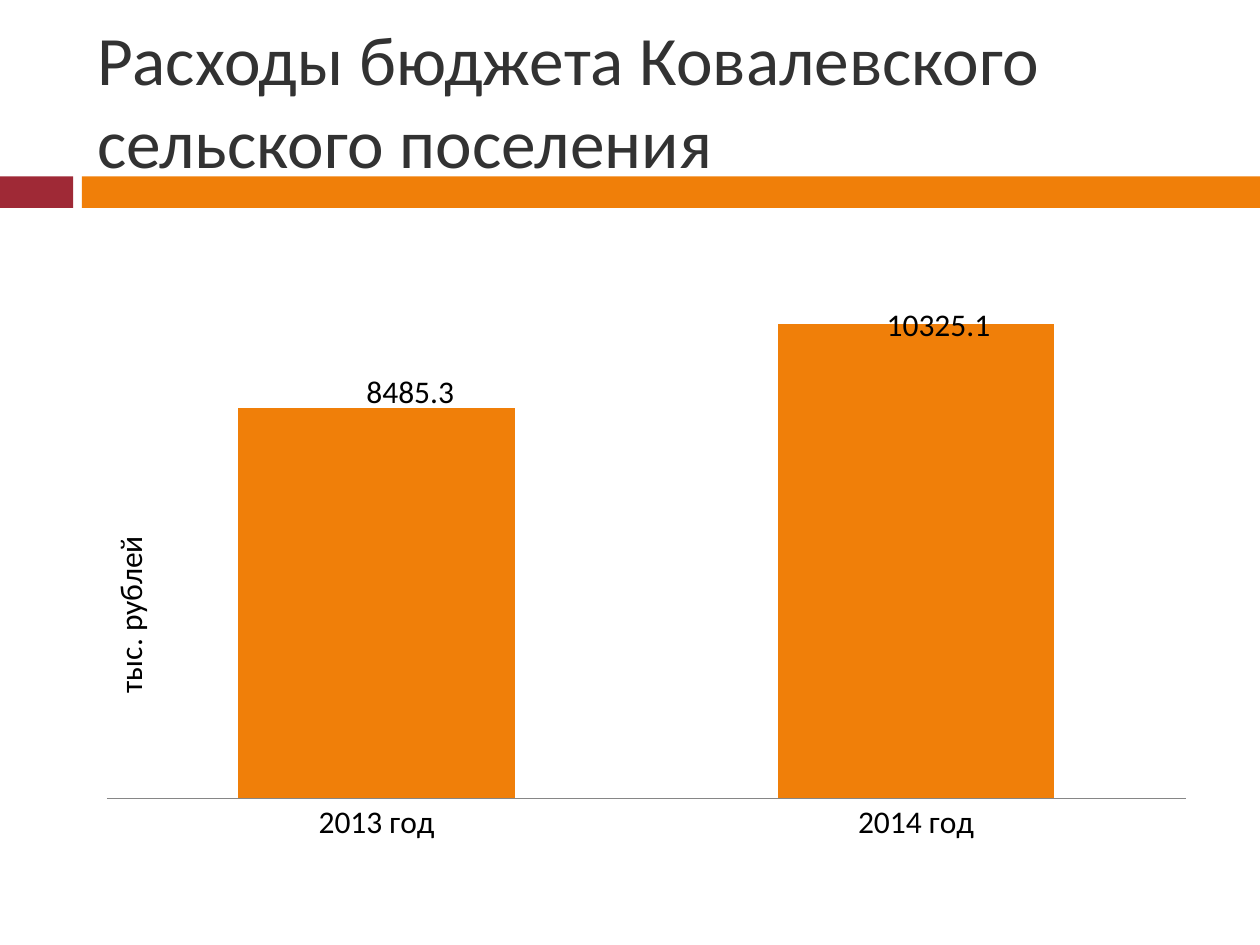
from lxml import etree
from pptx import Presentation
from pptx import util as u
from pptx.chart.data import CategoryChartData
from pptx.dml.color import RGBColor
from pptx.enum import chart as ch, shapes, text
from pptx.oxml.ns import qn

WIDTH, HEIGHT = 10, 7.5
LEFT, CONTENT_WIDTH = 0.67, 8.92
BAND_TOP, BAND_HEIGHT = 1.4, 0.25
ORANGE, RED, DARK, BLACK = "F07F09", "9F2936", "323232", "000000"


def rgb(value):
    """Turn a hex string into a colour."""
    return RGBColor.from_string(value)


def box(*lengths):
    """Turn left, top, width and height in inches into lengths."""
    return [u.Inches(n) for n in lengths]


def set_font(font, size, color):
    """Format a font in the slide's typeface."""
    for name, value in {"name": "Calibri", "size": u.Pt(size), "bold": False}.items():
        setattr(font, name, value)
    font.color.rgb = rgb(color)


def add_band(s, left, right, color):
    """Add one part of the band under the title, behind everything else."""
    sp = s.shapes.add_shape(shapes.MSO_SHAPE.RECTANGLE,
                            *box(left, BAND_TOP, right - left, BAND_HEIGHT))
    sp.shadow.inherit = False
    sp.fill.solid()
    sp.fill.fore_color.rgb = rgb(color)
    sp.line.fill.background()
    s.shapes._spTree.insert(2, sp._element)


def set_title(s, words):
    """Place and format the title placeholder."""
    sp = s.shapes.title
    for name, value in zip(("left", "top", "width", "height"),
                           box(LEFT, 0.25, CONTENT_WIDTH, 1.08)):
        setattr(sp, name, value)
    tf = sp.text_frame
    tf.text = words
    tf.auto_size = text.MSO_AUTO_SIZE.NONE
    tf.vertical_anchor = text.MSO_ANCHOR.MIDDLE
    p = tf.paragraphs[0]
    p.alignment = text.PP_ALIGN.LEFT
    set_font(p.runs[0].font, 39.6, DARK)


def add_layout(parent, index, **values):
    """Give a chart part a manual layout in shares of the chart."""
    for old in parent.findall(qn("c:layout")):
        parent.remove(old)
    layout = etree.Element(qn("c:layout"))
    manual = etree.SubElement(layout, qn("c:manualLayout"))
    for name, value in values.items():
        etree.SubElement(manual, qn(f"c:{name}")).set("val", str(value))
    parent.insert(index, layout)


def shift_labels(series, label_shifts):
    """Move the value labels off the column centres, without leader lines."""
    labels = series.data_labels
    labels.show_value = True
    labels.number_format, labels.number_format_is_linked = "0.0", False
    for i, (x, y) in enumerate(label_shifts):
        set_font(series.points[i].data_label.font, 18, BLACK)
        add_layout(labels._element.findall(qn("c:dLbl"))[i], 1, x=x, y=y)
    for leader in labels._element.findall(qn("c:showLeaderLines")):
        leader.set("val", "0")


def add_budget_chart(s, categories, values, label_shifts):
    """Add the column chart with its shifted value labels."""
    data = CategoryChartData(number_format="0.0")
    data.categories = categories
    data.add_series("Series 1", values)
    chart = s.shapes.add_chart(ch.XL_CHART_TYPE.COLUMN_STACKED,
                               *box(LEFT, 1.86, CONTENT_WIDTH, 4.92), data).chart
    chart.has_legend = chart.has_title = False
    set_font(chart.font, 18, BLACK)
    axis = chart.category_axis
    axis.major_tick_mark = ch.XL_TICK_MARK.NONE
    axis.format.line.color.rgb = rgb("868686")
    scale = chart.value_axis
    for name, value in {"visible": False, "has_major_gridlines": False,
                        "minimum_scale": 0, "maximum_scale": 12000}.items():
        setattr(scale, name, value)
    plot = chart.plots[0]
    plot.gap_width, plot.overlap, plot.vary_by_categories = 95, 100, False
    series = plot.series[0]
    series.format.fill.solid()
    series.format.fill.fore_color.rgb = rgb(ORANGE)
    shift_labels(series, label_shifts)
    add_layout(chart._chartSpace.chart.plotArea, 0, layoutTarget="inner", xMode="edge",
               yMode="edge", x=0.02, y=0.02, w=0.96, h=0.89)


def add_unit_label(s, words):
    """Add the upright caption beside the columns."""
    sp = s.shapes.add_textbox(*box(0.3, 4.67, 1.46, 0.4))
    sp.rotation = 270
    tf = sp.text_frame
    tf.word_wrap = False
    tf.auto_size = text.MSO_AUTO_SIZE.SHAPE_TO_FIT_TEXT
    r = tf.paragraphs[0].add_run()
    r.text = words
    set_font(r.font, 18, BLACK)


def main():
    """Build and save the budget slide."""
    prs = Presentation()
    prs.slide_width, prs.slide_height = u.Inches(WIDTH), u.Inches(HEIGHT)
    s = prs.slides.add_slide(prs.slide_layouts[5])
    add_band(s, 0, 0.58, RED)
    add_band(s, 0.65, WIDTH, ORANGE)
    set_title(s, "Расходы бюджета Ковалевского сельского поселения")
    add_budget_chart(s, ["2013 год", "2014 год"], [8485.3, 10325.1],
                     [(0.03, -0.34), (0.02, -0.38)])
    add_unit_label(s, "тыс. рублей")
    prs.save("out.pptx")


if __name__ == "__main__":
    main()
